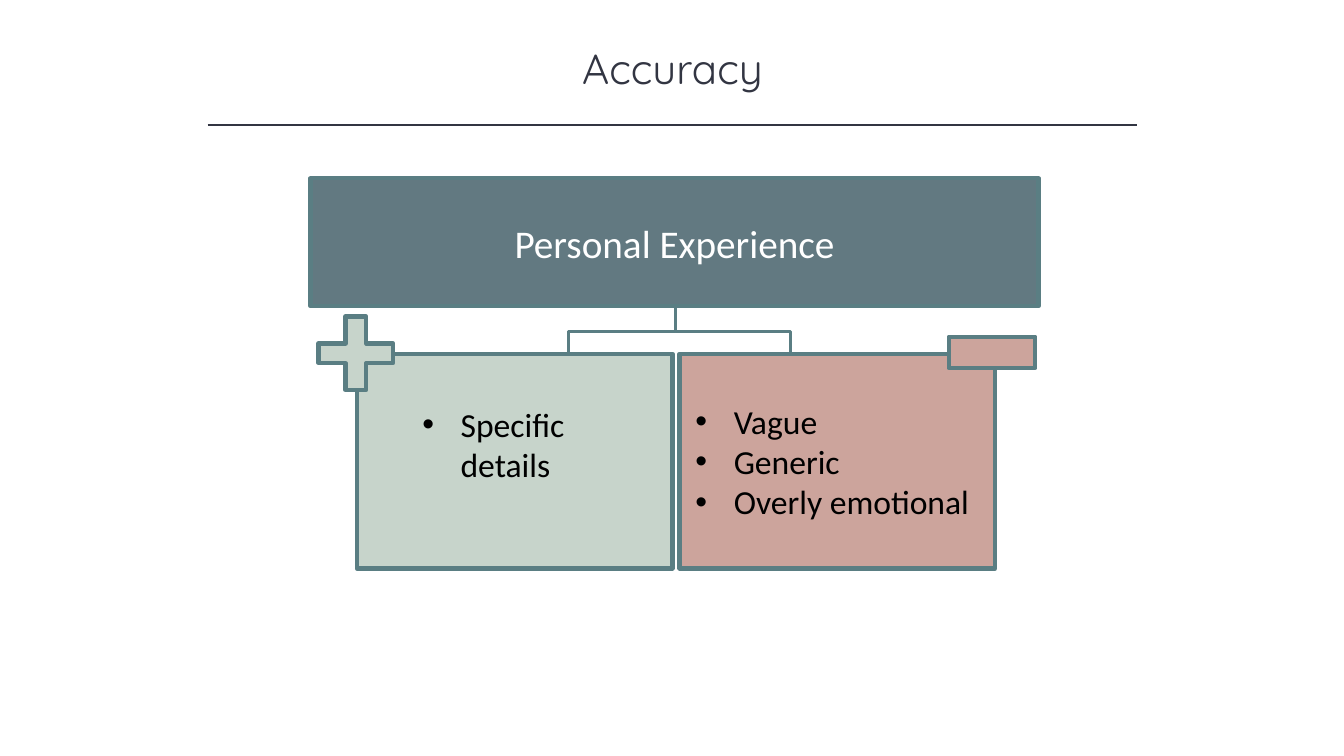
from lxml import etree
from pptx import Presentation
from pptx.dml.color import RGBColor
from pptx.enum.shapes import MSO_CONNECTOR, MSO_SHAPE
from pptx.enum.text import MSO_ANCHOR, PP_ALIGN
from pptx.oxml.ns import qn
from pptx.util import Inches, Pt

RECTANGLE, PLUS = MSO_SHAPE.RECTANGLE, MSO_SHAPE.CROSS
STRAIGHT = MSO_CONNECTOR.STRAIGHT
CENTER, LEFT = PP_ALIGN.CENTER, PP_ALIGN.LEFT
MIDDLE, TOP = MSO_ANCHOR.MIDDLE, MSO_ANCHOR.TOP

INK = RGBColor(0x32, 0x35, 0x42)
TEAL = RGBColor(0x5A, 0x7E, 0x83)
SLATE = RGBColor(0x62, 0x79, 0x81)
GREEN = RGBColor(0xC7, 0xD4, 0xCB)
ROSE = RGBColor(0xCC, 0xA4, 0x9C)
WHITE = RGBColor(0xFF, 0xFF, 0xFF)
BLACK = RGBColor(0x00, 0x00, 0x00)

TITLE = {"name": "Quicksand", "size": Pt(30), "color": INK}
HEADING = {"name": "Calibri", "size": Pt(28), "color": WHITE}
BULLET = {"name": "Calibri", "size": Pt(24), "color": BLACK}


def set_line(line, color, width):
    line.color.rgb = color
    line.width = Pt(width)


def add_block(slide, place, fill, kind=RECTANGLE, outlined=True):
    shape = slide.shapes.add_shape(kind, *map(Inches, place))
    shape.shadow.inherit = False
    shape.fill.solid()
    shape.fill.fore_color.rgb = fill
    if outlined:
        set_line(shape.line, TEAL, 3)
    else:
        shape.line.fill.background()
    return shape


def write(shape, lines, font_format, align=CENTER, anchor=MIDDLE, bulleted=False):
    frame = shape.text_frame
    frame.word_wrap = True
    frame.vertical_anchor = anchor
    for index, text in enumerate(lines):
        paragraph = frame.paragraphs[0] if index == 0 else frame.add_paragraph()
        paragraph.alignment = align
        run = paragraph.add_run()
        run.text = text
        for key, value in font_format.items():
            if key == "color":
                run.font.color.rgb = value
            else:
                setattr(run.font, key, value)
        if bulleted:
            add_bullet(paragraph)


def add_bullet(paragraph):
    properties = paragraph._p.get_or_add_pPr()
    indent = Inches(0.38)
    properties.set("marL", str(indent))
    properties.set("indent", str(-indent))
    etree.SubElement(properties, qn("a:buFont")).set("typeface", "Arial")
    etree.SubElement(properties, qn("a:buChar")).set("char", "•")


def add_rule(slide, left, right, y):
    rule = slide.shapes.add_connector(
        STRAIGHT, Inches(left), Inches(y), Inches(right), Inches(y))
    set_line(rule.line, INK, 1)
    etree.SubElement(rule._element.spPr, qn("a:effectLst"))


def add_branch(slide, start_x, end_x):
    """Stepped line from the heading down to one of the two panels."""
    top, middle, bottom = Inches(2.94), Inches(3.29), Inches(3.64)
    start, end = Inches(start_x), Inches(end_x)
    builder = slide.shapes.build_freeform(start, top)
    builder.add_line_segments(
        [(start, middle), (end, middle), (end, bottom)], close=False)
    branch = builder.convert_to_shape()
    branch.shadow.inherit = False
    branch.fill.background()
    set_line(branch.line, TEAL, 2.25)


def main():
    presentation = Presentation()
    presentation.slide_width = Inches(13.33)
    presentation.slide_height = Inches(7.5)
    slide = presentation.slides.add_slide(presentation.slide_layouts[6])

    # Title and rule
    title = slide.shapes.add_textbox(*map(Inches, (1.67, 0.37, 10, 0.61)))
    write(title, ["Accuracy"], TITLE, anchor=TOP)
    add_rule(slide, 2.06, 11.28, 1.24)

    # Heading with its two branches
    for end_x in (5.64, 7.84):
        add_branch(slide, 6.7, end_x)
    heading = add_block(slide, (3.08, 1.77, 7.22, 1.27), SLATE)
    write(heading, ["Personal Experience"], HEADING)

    # Panels for strengths and weaknesses
    for left, fill in ((3.54, GREEN), (6.74, ROSE)):
        add_block(slide, (left, 3.51, 3.13, 2.13), fill)

    # Bulleted lists
    lists = (
        ((4.09, 3.95, 2.49, 0.91), GREEN, ["Specific details"]),
        ((6.8, 3.92, 3, 1.31), ROSE, ["Vague", "Generic", "Overly emotional"]),
    )
    for place, fill, lines in lists:
        block = add_block(slide, place, fill, outlined=False)
        write(block, lines, BULLET, align=LEFT, bulleted=True)

    # Plus and minus signs
    plus = add_block(slide, (3.16, 3.14, 0.74, 0.73), GREEN, PLUS)
    plus.adjustments[0] = 0.367
    add_block(slide, (9.41, 3.34, 0.86, 0.31), ROSE)

    presentation.save("out.pptx")


if __name__ == "__main__":
    main()
